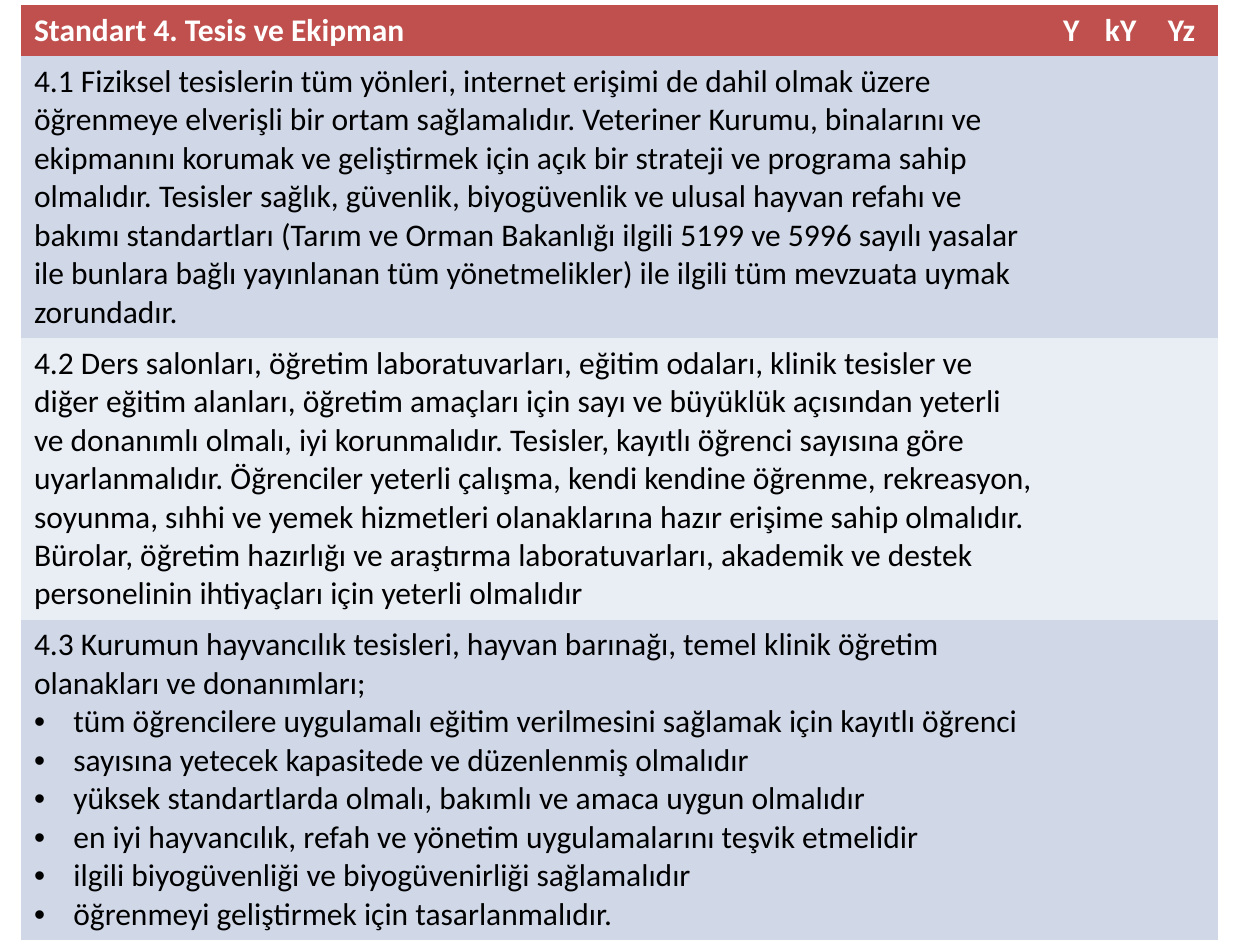
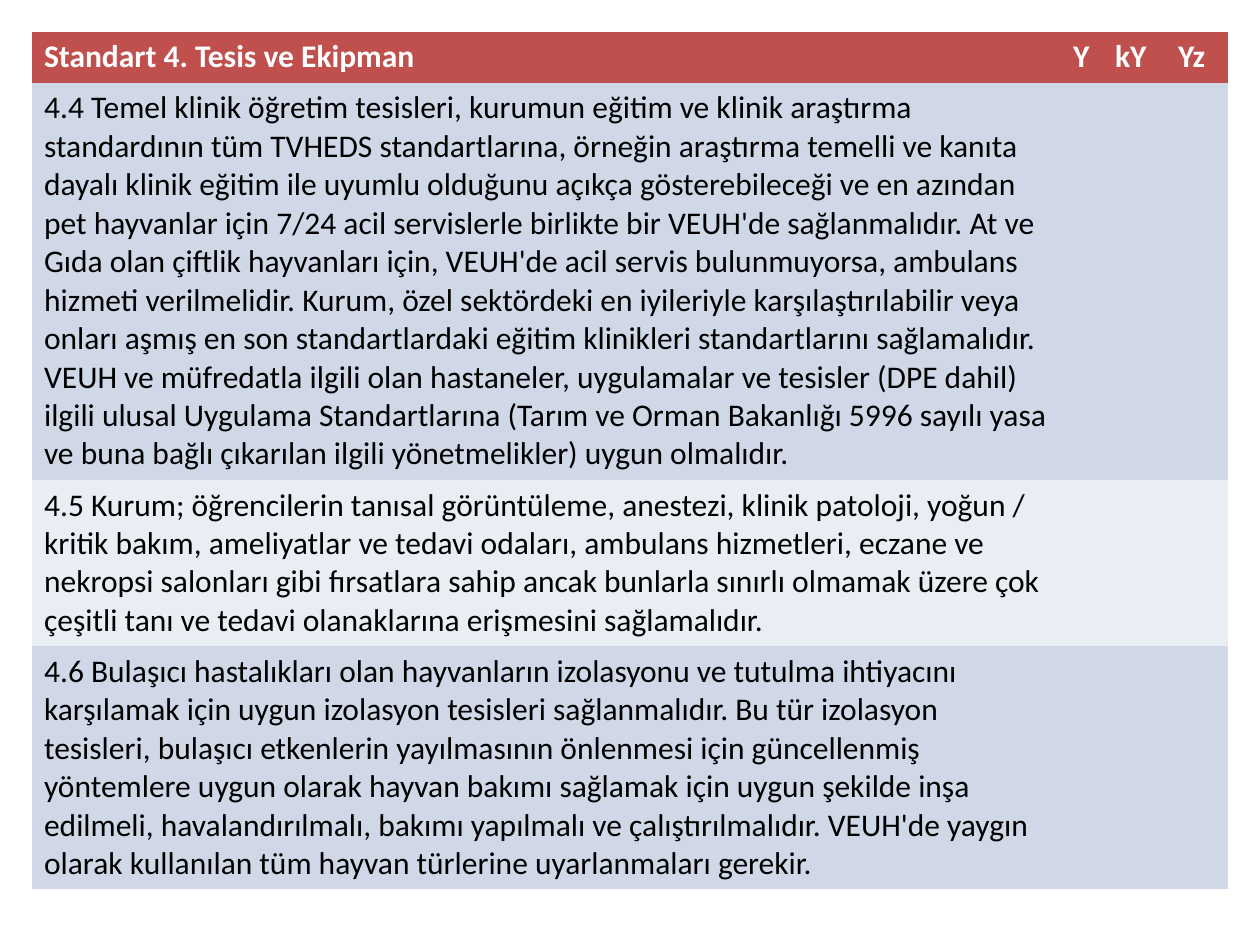
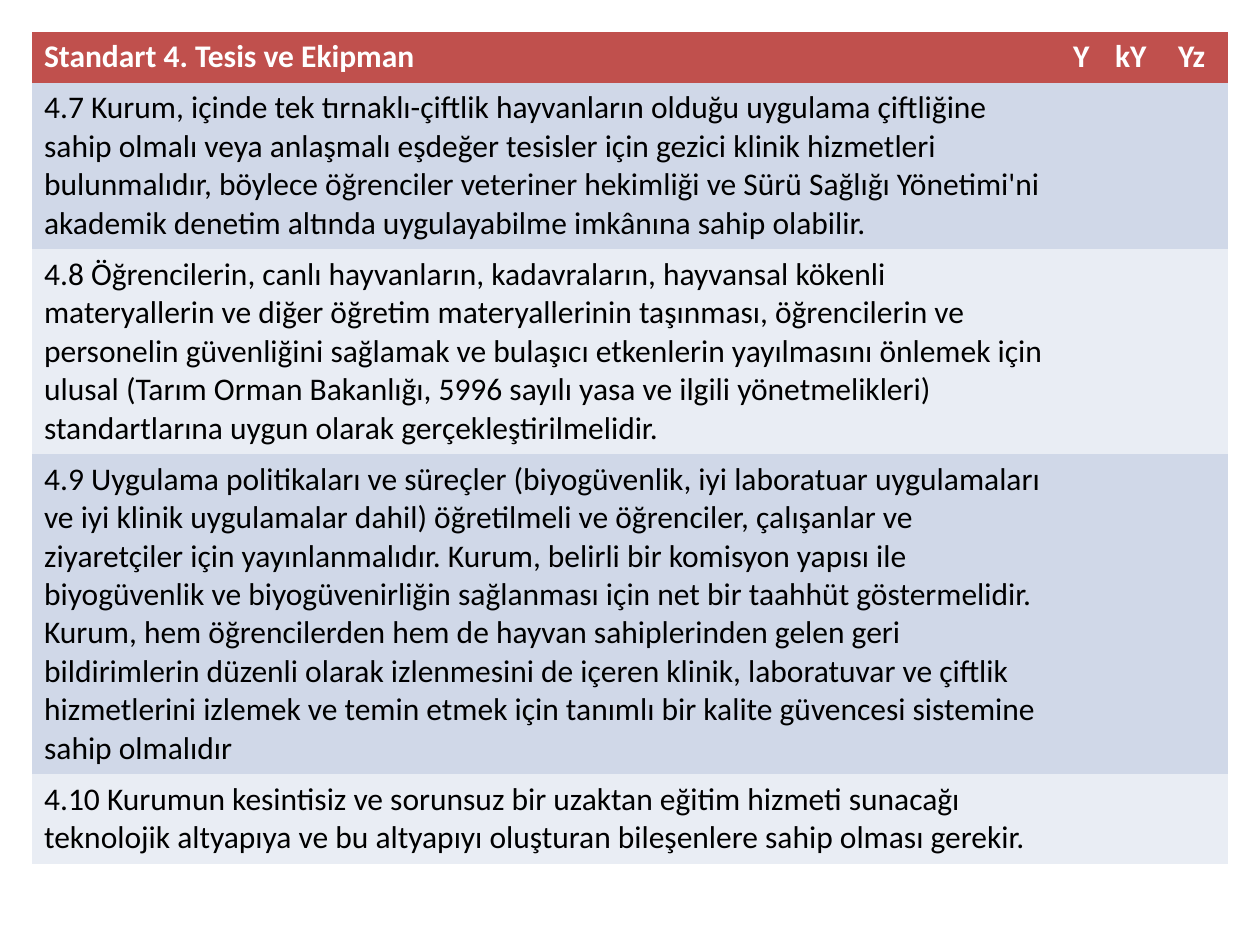
"""Builds three slides of accreditation criteria for Standard 4, one table on each."""
from dataclasses import dataclass

from lxml.etree import SubElement
from pptx import Presentation
from pptx.dml.color import RGBColor
from pptx.oxml.ns import qn
from pptx.presentation import Presentation as Deck
from pptx.slide import Slide
from pptx.table import _Cell as Cell
from pptx.util import Pt

COLORS = {
    "header": "C0504D",
    "odd_row": "D0D8E8",
    "even_row": "E9EDF4",
    "header_text": "FFFFFF",
    "body_text": "000000",
}
FONT = "Calibri"
TEXT_SIZE = 18
PAGE_WIDTH, PAGE_HEIGHT = 720, 540
COLUMN_WIDTHS = (588, 24, 36, 36)
MIN_ROW_HEIGHT = 29.2
BULLET_INDENT = 22.5
HEADINGS = ("Standart 4. Tesis ve Ekipman", "Y", "kY", "Yz")
PLAIN_TABLE_STYLE = "{2D5ABB26-0587-4C30-8999-92F81FD0307C}"


@dataclass(frozen=True)
class Criterion:
    text: str
    bullets: tuple[str, ...] = ()


@dataclass(frozen=True)
class CriteriaTable:
    left: float
    top: float
    criteria: tuple[Criterion, ...]


TABLES = (
    CriteriaTable(12.24, 2.88, (
        Criterion(
            "4.1 Fiziksel tesislerin tüm yönleri, internet erişimi de dahil olmak üzere "
            "öğrenmeye elverişli bir ortam sağlamalıdır. Veteriner Kurumu, binalarını ve "
            "ekipmanını korumak ve geliştirmek için açık bir strateji ve programa sahip "
            "olmalıdır. Tesisler sağlık, güvenlik, biyogüvenlik ve ulusal hayvan refahı ve "
            "bakımı standartları (Tarım ve Orman Bakanlığı ilgili 5199 ve 5996 sayılı yasalar "
            "ile bunlara bağlı yayınlanan tüm yönetmelikler) ile ilgili tüm mevzuata uymak "
            "zorundadır."
        ),
        Criterion(
            "4.2 Ders salonları, öğretim laboratuvarları, eğitim odaları, klinik tesisler ve "
            "diğer eğitim alanları, öğretim amaçları için sayı ve büyüklük açısından yeterli "
            "ve donanımlı olmalı, iyi korunmalıdır. Tesisler, kayıtlı öğrenci sayısına göre "
            "uyarlanmalıdır. Öğrenciler yeterli çalışma, kendi kendine öğrenme, rekreasyon, "
            "soyunma, sıhhi ve yemek hizmetleri olanaklarına hazır erişime sahip olmalıdır. "
            "Bürolar, öğretim hazırlığı ve araştırma laboratuvarları, akademik ve destek "
            "personelinin ihtiyaçları için yeterli olmalıdır"
        ),
        Criterion(
            "4.3 Kurumun hayvancılık tesisleri, hayvan barınağı, temel klinik öğretim "
            "olanakları ve donanımları;",
            (
                "tüm öğrencilere uygulamalı eğitim verilmesini sağlamak için kayıtlı öğrenci",
                "sayısına yetecek kapasitede ve düzenlenmiş olmalıdır",
                "yüksek standartlarda olmalı, bakımlı ve amaca uygun olmalıdır",
                "en iyi hayvancılık, refah ve yönetim uygulamalarını teşvik etmelidir",
                "ilgili biyogüvenliği ve biyogüvenirliği sağlamalıdır",
                "öğrenmeyi geliştirmek için tasarlanmalıdır.",
            ),
        ),
    )),
    CriteriaTable(18, 18, (
        Criterion(
            "4.4 Temel klinik öğretim tesisleri, kurumun eğitim ve klinik araştırma "
            "standardının tüm TVHEDS standartlarına, örneğin araştırma temelli ve kanıta "
            "dayalı klinik eğitim ile uyumlu olduğunu açıkça gösterebileceği ve en azından "
            "pet hayvanlar için 7/24 acil servislerle birlikte bir VEUH'de sağlanmalıdır. At ve "
            "Gıda olan çiftlik hayvanları için, VEUH'de acil servis bulunmuyorsa, ambulans "
            "hizmeti verilmelidir. Kurum, özel sektördeki en iyileriyle karşılaştırılabilir veya "
            "onları aşmış en son standartlardaki eğitim klinikleri standartlarını sağlamalıdır. "
            "VEUH ve müfredatla ilgili olan hastaneler, uygulamalar ve tesisler (DPE dahil) "
            "ilgili ulusal Uygulama Standartlarına (Tarım ve Orman Bakanlığı 5996 sayılı yasa "
            "ve buna bağlı çıkarılan ilgili yönetmelikler) uygun olmalıdır."
        ),
        Criterion(
            "4.5 Kurum; öğrencilerin tanısal görüntüleme, anestezi, klinik patoloji, yoğun / "
            "kritik bakım, ameliyatlar ve tedavi odaları, ambulans hizmetleri, eczane ve "
            "nekropsi salonları gibi fırsatlara sahip ancak bunlarla sınırlı olmamak üzere çok "
            "çeşitli tanı ve tedavi olanaklarına erişmesini sağlamalıdır."
        ),
        Criterion(
            "4.6 Bulaşıcı hastalıkları olan hayvanların izolasyonu ve tutulma ihtiyacını "
            "karşılamak için uygun izolasyon tesisleri sağlanmalıdır. Bu tür izolasyon "
            "tesisleri, bulaşıcı etkenlerin yayılmasının önlenmesi için güncellenmiş "
            "yöntemlere uygun olarak hayvan bakımı sağlamak için uygun şekilde inşa "
            "edilmeli, havalandırılmalı, bakımı yapılmalı ve çalıştırılmalıdır. VEUH'de yaygın "
            "olarak kullanılan tüm hayvan türlerine uyarlanmaları gerekir."
        ),
    )),
    CriteriaTable(18, 18, (
        Criterion(
            "4.7 Kurum, içinde tek tırnaklı-çiftlik hayvanların olduğu uygulama çiftliğine "
            "sahip olmalı veya anlaşmalı eşdeğer tesisler için gezici klinik hizmetleri "
            "bulunmalıdır, böylece öğrenciler veteriner hekimliği ve Sürü Sağlığı Yönetimi'ni "
            "akademik denetim altında uygulayabilme imkânına sahip olabilir."
        ),
        Criterion(
            "4.8 Öğrencilerin, canlı hayvanların, kadavraların, hayvansal kökenli "
            "materyallerin ve diğer öğretim materyallerinin taşınması, öğrencilerin ve "
            "personelin güvenliğini sağlamak ve bulaşıcı etkenlerin yayılmasını önlemek için "
            "ulusal (Tarım Orman Bakanlığı, 5996 sayılı yasa ve ilgili yönetmelikleri) "
            "standartlarına uygun olarak gerçekleştirilmelidir."
        ),
        Criterion(
            "4.9 Uygulama politikaları ve süreçler (biyogüvenlik, iyi laboratuar uygulamaları "
            "ve iyi klinik uygulamalar dahil) öğretilmeli ve öğrenciler, çalışanlar ve "
            "ziyaretçiler için yayınlanmalıdır. Kurum, belirli bir komisyon yapısı ile "
            "biyogüvenlik ve biyogüvenirliğin sağlanması için net bir taahhüt göstermelidir. "
            "Kurum, hem öğrencilerden hem de hayvan sahiplerinden gelen geri "
            "bildirimlerin düzenli olarak izlenmesini de içeren klinik, laboratuvar ve çiftlik "
            "hizmetlerini izlemek ve temin etmek için tanımlı bir kalite güvencesi sistemine "
            "sahip olmalıdır"
        ),
        Criterion(
            "4.10 Kurumun kesintisiz ve sorunsuz bir uzaktan eğitim hizmeti sunacağı "
            "teknolojik altyapıya ve bu altyapıyı oluşturan bileşenlere sahip olması gerekir."
        ),
    )),
)


def write_text(cell: Cell, text: str, *, color: str = "body_text",
               bold: bool = False, bullet: bool = False) -> None:
    frame = cell.text_frame
    para = frame.add_paragraph() if frame.text else frame.paragraphs[0]
    if bullet:
        props = para._p.get_or_add_pPr()
        props.set("marL", str(Pt(BULLET_INDENT)))
        props.set("indent", str(-Pt(BULLET_INDENT)))
        SubElement(props, qn("a:buFont"), typeface="Arial")
        SubElement(props, qn("a:buChar"), char="•")
    span = para.add_run()
    span.text = text
    span.font.name = FONT
    span.font.size = Pt(TEXT_SIZE)
    span.font.bold = bold
    span.font.color.rgb = RGBColor.from_string(COLORS[color])


def fill_cell(cell: Cell, color: str) -> None:
    cell.fill.solid()
    cell.fill.fore_color.rgb = RGBColor.from_string(COLORS[color])


def draw_table(page: Slide, content: CriteriaTable) -> None:
    row_count = len(content.criteria) + 1
    frame = page.shapes.add_table(
        row_count, len(COLUMN_WIDTHS), Pt(content.left), Pt(content.top),
        Pt(sum(COLUMN_WIDTHS)), Pt(MIN_ROW_HEIGHT * row_count))
    frame.element.find(".//" + qn("a:tableStyleId")).text = PLAIN_TABLE_STYLE
    table = frame.table
    table.horz_banding = False
    for column, width in zip(table.columns, COLUMN_WIDTHS):
        column.width = Pt(width)
    for index, row in enumerate(table.rows):
        band = "odd_row" if index % 2 else "even_row"
        for cell in row.cells:
            fill_cell(cell, band if index else "header")
    for column_index, heading in enumerate(HEADINGS):
        write_text(table.cell(0, column_index), heading, color="header_text", bold=True)
    for row_index, criterion in enumerate(content.criteria, start=1):
        cell = table.cell(row_index, 0)
        write_text(cell, criterion.text)
        for item in criterion.bullets:
            write_text(cell, item, bullet=True)


def build_deck() -> Deck:
    deck = Presentation()
    deck.slide_width, deck.slide_height = Pt(PAGE_WIDTH), Pt(PAGE_HEIGHT)
    blank = deck.slide_layouts.get_by_name("Blank")
    for content in TABLES:
        draw_table(deck.slides.add_slide(blank), content)
    return deck


def main() -> None:
    build_deck().save("out.pptx")


if __name__ == "__main__":
    main()
